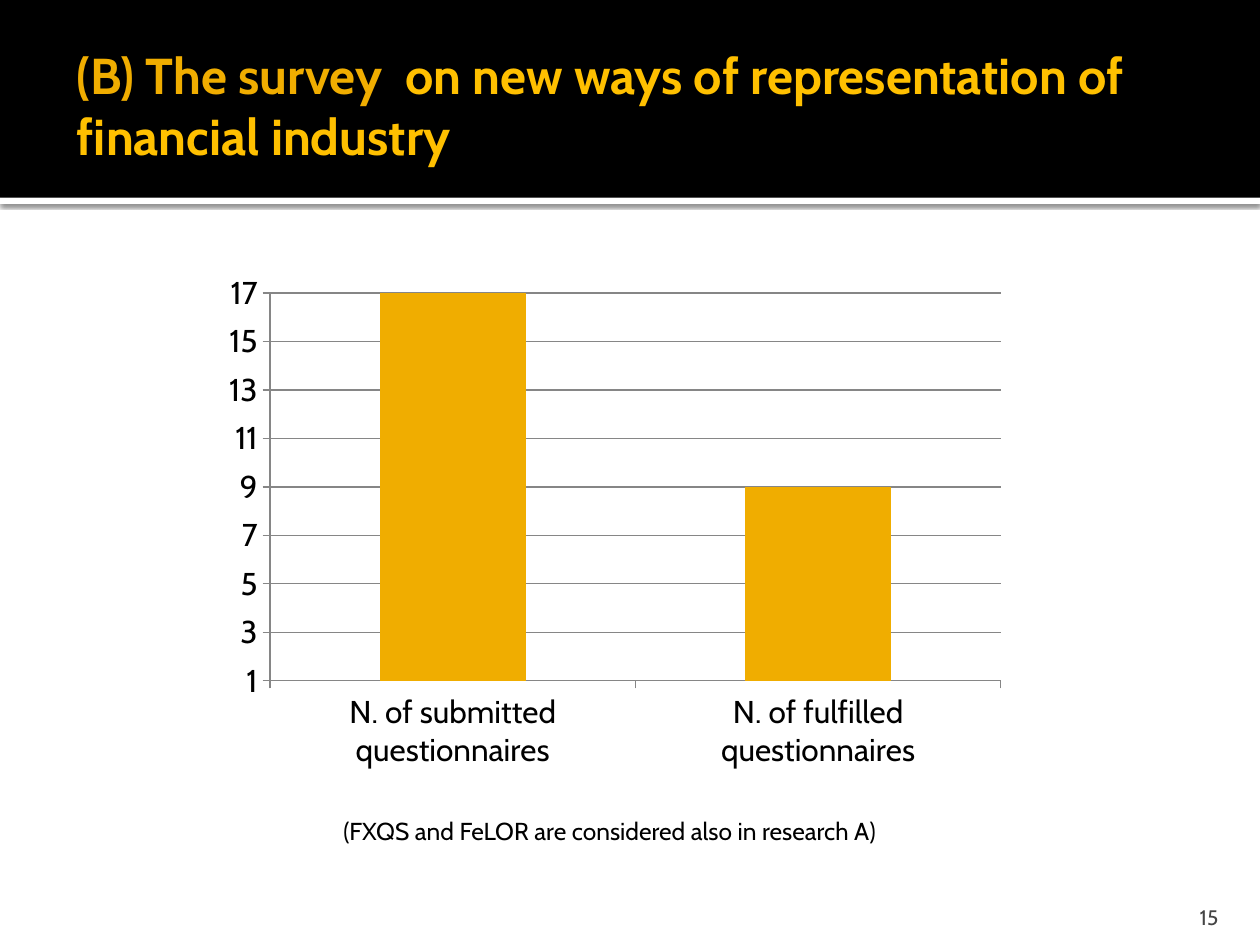
from dataclasses import dataclass

import pptx
import pptx.chart.data
import pptx.dml.color
import pptx.enum.chart
import pptx.enum.shapes
import pptx.enum.text
import pptx.oxml
import pptx.util
from lxml import etree

Pt = pptx.util.Pt
Align = pptx.enum.text.PP_ALIGN
Anchor = pptx.enum.text.MSO_ANCHOR

COLORS = {
    "white": "FFFFFF",
    "black": "000000",
    "gold": "F0AD00",
    "amber": "FFC000",
    "number": "454545",
    "axis": "868686",
}
FONT = "Cabin"
NAMESPACES = ('xmlns:a="http://schemas.openxmlformats.org/drawingml/2006/main" '
              'xmlns:c="http://schemas.openxmlformats.org/drawingml/2006/chart"')
SHADOW = (f'<a:effectLst {NAMESPACES}><a:outerShdw blurRad="{Pt(2.5)}" '
          f'dist="{Pt(0.8)}" dir="5400000"><a:srgbClr val="{COLORS["black"]}">'
          '<a:alpha val="60000"/></a:srgbClr></a:outerShdw></a:effectLst>')


@dataclass
class Box:
    left: float
    top: float
    width: float
    height: float

    def lengths(self) -> list:
        return [Pt(value) for value in (self.left, self.top, self.width, self.height)]


@dataclass
class Band:
    box: Box
    color: str
    shadow: bool


@dataclass
class Run:
    text: str
    size: float
    color: str
    bold: bool = False


@dataclass
class Label:
    box: Box
    run: Run
    alignment: Align
    frame_format: dict


BANDS = [
    Band(Box(0, 113, 720, 3.6), "white", True),
    Band(Box(0, 0, 720, 113), "black", False),
]
TITLE_BOX = Box(36.7, 20.9, 648, 77.8)
TITLE_RUNS = [
    Run("(B) The survey  ", 28.8, "gold", True),
    Run("on new ways of representation of financial industry", 28.8, "amber", True),
]
LABELS = [
    Label(Box(645.8, 509.8, 57.6, 21.6), Run("15", 12, "number"), Align.RIGHT,
          {"vertical_anchor": Anchor.BOTTOM, "margin_bottom": 0}),
    Label(Box(42.5, 463, 612, 24.5),
          Run("(FXQS and FeLOR are considered also in research A)", 14, "black"),
          Align.CENTER, {"vertical_anchor": Anchor.TOP}),
]
CHART_BOX = Box(121.7, 151.2, 459.4, 294.5)
PLOT_BOX = Box(154.3, 167.5, 417.6, 221.7)


def rgb(name: str) -> pptx.dml.color.RGBColor:
    return pptx.dml.color.RGBColor.from_string(COLORS[name])


def apply_format(target, values: dict) -> None:
    for name, value in values.items():
        setattr(target, name, value)


def format_font(font, size: float, color: str, bold: bool = False) -> None:
    apply_format(font, {"name": FONT, "size": Pt(size), "bold": bold})
    font.color.rgb = rgb(color)


def add_run(paragraph, item: Run) -> None:
    run = paragraph.add_run()
    run.text = item.text
    format_font(run.font, item.size, item.color, item.bold)


def add_band(slide, band: Band) -> None:
    shape = slide.shapes.add_shape(
        pptx.enum.shapes.MSO_SHAPE.RECTANGLE, *band.box.lengths())
    shape.fill.solid()
    shape.fill.fore_color.rgb = rgb(band.color)
    shape.line.fill.background()
    if band.shadow:
        shape._element.spPr.append(pptx.oxml.parse_xml(SHADOW))
    else:
        shape.shadow.inherit = False


def format_title(slide) -> None:
    title = slide.shapes.title
    apply_format(title, dict(zip(("left", "top", "width", "height"), TITLE_BOX.lengths())))
    apply_format(title.text_frame, {
        "word_wrap": True, "vertical_anchor": Anchor.MIDDLE,
        "auto_size": pptx.enum.text.MSO_AUTO_SIZE.NONE,
        "margin_left": Pt(7.2), "margin_right": Pt(3.6),
        "margin_top": Pt(3.6), "margin_bottom": Pt(3.6)})
    paragraph = title.text_frame.paragraphs[0]
    paragraph.alignment = Align.LEFT
    for item in TITLE_RUNS:
        add_run(paragraph, item)
    # Bring the title in front of the bands
    slide.shapes._spTree.append(title._element)


def add_label(slide, label: Label) -> None:
    frame = slide.shapes.add_textbox(*label.box.lengths()).text_frame
    apply_format(frame, {"word_wrap": True, **label.frame_format})
    paragraph = frame.paragraphs[0]
    paragraph.alignment = label.alignment
    add_run(paragraph, label.run)


def place_plot(chart) -> None:
    """Fix the inner plot area as fractions of the chart frame."""
    fractions = {
        "x": (PLOT_BOX.left - CHART_BOX.left) / CHART_BOX.width,
        "y": (PLOT_BOX.top - CHART_BOX.top) / CHART_BOX.height,
        "w": PLOT_BOX.width / CHART_BOX.width,
        "h": PLOT_BOX.height / CHART_BOX.height,
    }
    settings = {"layoutTarget": "inner", "xMode": "edge", "yMode": "edge",
                **{name: f"{value:.3f}" for name, value in fractions.items()}}
    parts = "".join(f'<c:{name} val="{value}"/>' for name, value in settings.items())
    layout = pptx.oxml.parse_xml(
        f"<c:layout {NAMESPACES}><c:manualLayout>{parts}</c:manualLayout></c:layout>")
    plot_area = chart._chartSpace.chart.plotArea
    for old in plot_area.findall(etree.QName(layout).text):
        plot_area.remove(old)
    plot_area.insert(0, layout)


def add_survey_chart(slide) -> None:
    data = pptx.chart.data.CategoryChartData()
    data.categories = ["N. of submitted questionnaires", "N. of fulfilled questionnaires"]
    data.add_series("Series 1", [17, 9])
    chart = slide.shapes.add_chart(
        pptx.enum.chart.XL_CHART_TYPE.COLUMN_CLUSTERED, *CHART_BOX.lengths(), data).chart
    apply_format(chart, {"has_legend": False, "has_title": False})
    format_font(chart.font, 18, "black")

    # Columns
    plot = chart.plots[0]
    apply_format(plot, {"gap_width": 150, "vary_by_categories": False})
    fill = plot.series[0].format.fill
    fill.solid()
    fill.fore_color.rgb = rgb("gold")

    # Axes and gridlines
    cross = pptx.enum.chart.XL_TICK_MARK.OUTSIDE
    apply_format(chart.category_axis, {"major_tick_mark": cross})
    apply_format(chart.value_axis, {
        "major_tick_mark": cross, "minimum_scale": 1, "maximum_scale": 17,
        "major_unit": 2, "has_major_gridlines": True})
    for part in (chart.category_axis, chart.value_axis, chart.value_axis.major_gridlines):
        part.format.line.width = Pt(0.75)
        part.format.line.color.rgb = rgb("axis")
    place_plot(chart)


def main() -> None:
    presentation = pptx.Presentation()
    apply_format(presentation, {"slide_width": Pt(720), "slide_height": Pt(540)})
    slide = presentation.slides.add_slide(presentation.slide_layouts[5])
    slide.background.fill.solid()
    slide.background.fill.fore_color.rgb = rgb("white")

    # Header
    for band in BANDS:
        add_band(slide, band)
    format_title(slide)

    # Page number, note and chart
    for label in LABELS:
        add_label(slide, label)
    add_survey_chart(slide)
    presentation.save("out.pptx")


if __name__ == "__main__":
    main()
